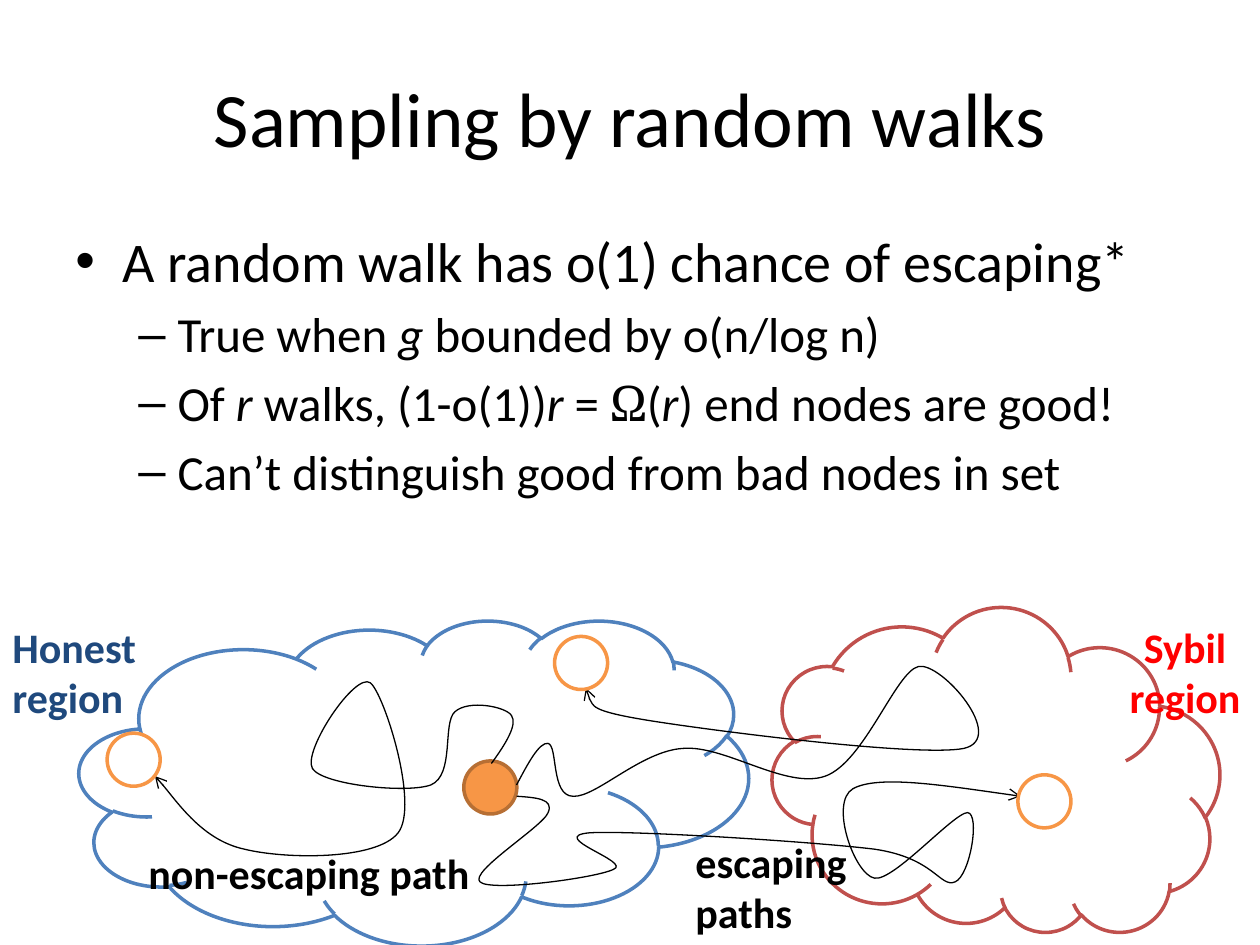
from lxml import etree
from pptx import Presentation
from pptx.dml.color import RGBColor
from pptx.enum.shapes import MSO_SHAPE
from pptx.enum.text import MSO_ANCHOR, PP_ALIGN
from pptx.oxml.ns import qn
from pptx.util import Cm, Pt

CLOUD, OVAL = MSO_SHAPE.CLOUD, MSO_SHAPE.OVAL
LEFT, CENTER = PP_ALIGN.LEFT, PP_ALIGN.CENTER
TOP, MIDDLE = MSO_ANCHOR.TOP, MSO_ANCHOR.MIDDLE

BLACK = RGBColor(0x00, 0x00, 0x00)
WHITE = RGBColor(0xFF, 0xFF, 0xFF)
RED = RGBColor(0xFF, 0x00, 0x00)
NAVY = RGBColor(0x1F, 0x49, 0x7D)
BLUE = RGBColor(0x4F, 0x81, 0xBD)
BRICK = RGBColor(0xC0, 0x50, 0x4D)
ORANGE = RGBColor(0xF7, 0x96, 0x46)
BROWN = RGBColor(0xB7, 0x6F, 0x34)

presentation = Presentation()
presentation.slide_width, presentation.slide_height = Cm(25.4), Cm(19.05)
slide = presentation.slides.add_slide(presentation.slide_layouts[6])


def add_text(box, paragraphs, size, color=BLACK, bold=False, align=LEFT, anchor=TOP):
    """Each paragraph is a list of (text, italic) runs."""
    frame = slide.shapes.add_textbox(*map(Cm, box)).text_frame
    frame.word_wrap = True
    frame.vertical_anchor = anchor
    for index, runs in enumerate(paragraphs):
        paragraph = frame.add_paragraph() if index else frame.paragraphs[0]
        paragraph.alignment = align
        for text, italic in runs:
            run = paragraph.add_run()
            run.text = text
            run.font.name = "Cambria" if text == "Ω" else "Calibri"
            run.font.size = Pt(size)
            run.font.bold = bold
            run.font.italic = italic
            run.font.color.rgb = color
    return frame


def add_shape(kind, box, fill, line):
    shape = slide.shapes.add_shape(kind, *map(Cm, box))
    shape.shadow.inherit = False
    shape.fill.solid()
    shape.fill.fore_color.rgb = fill
    shape.line.color.rgb = line
    shape.line.width = Pt(2)
    return shape


# Title
add_text((1.27, 0.76, 22.86, 3.18), [[("Sampling by random walks", False)]],
         44, align=CENTER, anchor=MIDDLE)

# Bulleted body
body = add_text((1.27, 4.45, 22.86, 6.38), [
    [("A random walk has o(1) chance of escaping*", False)],
    [("True when", False), (" g", True), (" bounded by o(n/log n)", False)],
    [("Of ", False), ("r", True), (" walks, (1-o(1))", False), ("r", True),
     (" = ", False), ("Ω", False), ("(", False), ("r", True),
     (") end nodes are good!", False)],
    [("Can’t distinguish good from bad nodes in set", False)],
], 28)
for index, paragraph in enumerate(body.paragraphs):
    level = 1 if index else 0
    size, margin, hanging, bullet = ((32, 0.95, 0.95, "•"), (28, 2.06, 0.79, "–"))[level]
    paragraph.level = level
    paragraph.space_before = Pt(size * 0.2)
    for run in paragraph.runs:
        run.font.size = Pt(size)
    properties = paragraph._p.get_or_add_pPr()
    properties.set("marL", str(Cm(margin)))
    properties.set("indent", str(-Cm(hanging)))
    etree.SubElement(properties, qn("a:buFont"), typeface="Arial")
    etree.SubElement(properties, qn("a:buChar"), char=bullet)

# Regions with their labels, and the starting node
sybil_cloud = add_shape(CLOUD, (15.57, 12.27, 9.02, 6.55), WHITE, BRICK)
sybil_cloud._element.spPr.find(qn("a:xfrm")).set("flipV", "1")
add_text((0, 12.4, 3.73, 2.31), [[("Honest region", False)]], 24, NAVY, True)
add_text((22.38, 12.4, 3.02, 2.31), [[("Sybil region", False)]], 24, RED, True, CENTER)
add_shape(CLOUD, (1.6, 12.5, 13.49, 6.55), WHITE, BLUE)
add_shape(OVAL, (9.35, 15.34, 1.07, 1.07), ORANGE, BROWN)

# Walks: a start, then two control points and an end for each curve,
# on a grid of 0.0254 cm
walks = [
    [(390, 606),
     (401, 591), (411, 575), (406, 568), (402, 561), (372, 555), (361, 565),
     (351, 574), (361, 615), (342, 623), (323, 630), (256, 623), (248, 610),
     (240, 596), (282, 533), (294, 542), (305, 551), (333, 639), (316, 661),
     (299, 683), (226, 682), (194, 674), (161, 667), (133, 626), (123, 616)],
    [(410, 632),
     (425, 633), (440, 634), (435, 645), (431, 656), (372, 692), (381, 700),
     (389, 708), (473, 697), (487, 690), (502, 684), (433, 664), (468, 661),
     (502, 659), (645, 668), (694, 674), (742, 681), (746, 705), (758, 700),
     (770, 695), (778, 646), (768, 645), (757, 645), (709, 700), (694, 697),
     (678, 694), (658, 637), (677, 626), (697, 615), (753, 624), (810, 632)],
    [(410, 623),
     (419, 606), (428, 589), (435, 590), (443, 592), (437, 632), (455, 632),
     (473, 633), (509, 596), (542, 594), (575, 591), (624, 627), (655, 616),
     (686, 605), (711, 533), (729, 529), (747, 525), (800, 586), (765, 594),
     (729, 601), (566, 580), (516, 572), (466, 564), (465, 552), (465, 546)],
]
for start, *points in walks:
    builder = slide.shapes.build_freeform(*start, scale=Cm(0.0254))
    builder.add_line_segments(points, close=False)
    walk = builder.convert_to_shape()
    walk.shadow.inherit = False
    walk.fill.background()
    walk.line.color.rgb = BLACK
    walk.line.width = Pt(0.75)
    etree.SubElement(walk.line._get_or_add_ln(), qn("a:tailEnd"), type="arrow")

    # Join every three straight segments into one Bézier curve
    segments = list(walk._element.iter(qn("a:lnTo")))
    outline = segments[0].getparent()
    for first in range(0, len(segments), 3):
        curve = etree.SubElement(outline, qn("a:cubicBezTo"))
        for segment in segments[first:first + 3]:
            curve.append(segment[0])
            outline.remove(segment)

# Path labels
add_text((13.77, 16.74, 4.09, 2.31), [[("escaping", False)], [("paths", False)]],
         24, bold=True)
add_text((2.74, 16.97, 7.37, 1.27), [[("non-escaping path", False)]], 24, bold=True)

# End nodes
for left, top in ((2.16, 14.78), (11.18, 12.83), (20.52, 15.62)):
    add_shape(OVAL, (left, top, 1.07, 1.07), WHITE, ORANGE)

presentation.save("out.pptx")
